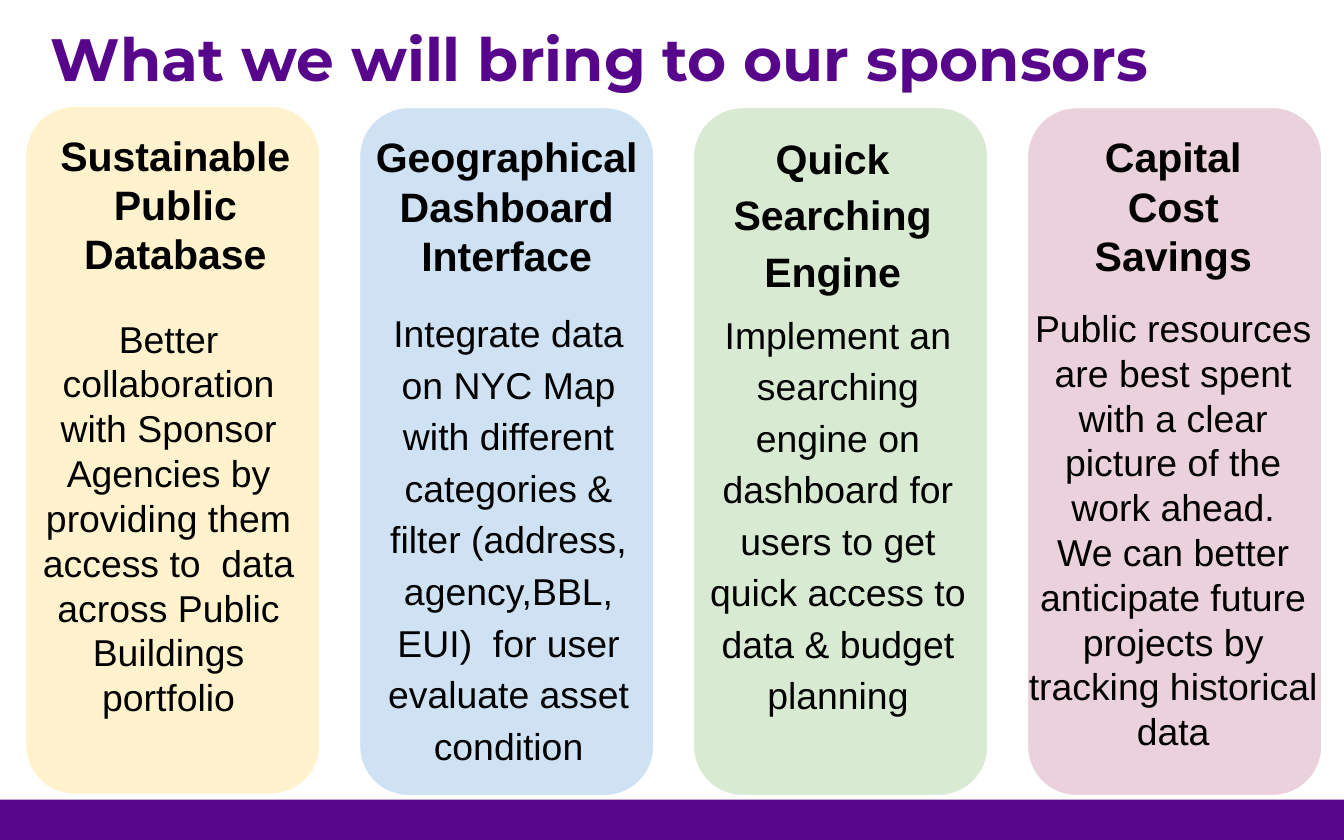
"""Build the slide on what the project brings to its sponsors: four benefit cards."""
from pptx import Presentation, util as u
from pptx.dml.color import RGBColor
from pptx.enum import shapes, text

PURPLE = RGBColor(0x57, 0x06, 0x8C)
BLACK = RGBColor(0, 0, 0)
WHITE = RGBColor(0xFF, 0xFF, 0xFF)
YELLOW = RGBColor(0xFF, 0xF2, 0xCC)
BLUE = RGBColor(0xCF, 0xE2, 0xF3)
GREEN = RGBColor(0xD9, 0xEA, 0xD3)
PINK = RGBColor(0xEA, 0xD1, 0xDC)

MARGIN, COLUMN, CARD_WIDTH, CARD_HEIGHT = 0.19, 2.485, 2.19, 5.12
INDENT = u.Inches(0.5)

deck = Presentation()
deck.slide_width, deck.slide_height = u.Inches(10), u.Inches(6.25)
slide = deck.slides.add_slide(deck.slide_layouts[6])


def add_panel(kind, box, color):
    panel = slide.shapes.add_shape(kind, *map(u.Inches, box))
    panel.shadow.inherit = False
    panel.fill.solid()
    panel.fill.fore_color.rgb = color
    panel.line.fill.background()
    return panel


def add_words(box, lines, size, bold=False, color=BLACK, font="Arial", align=text.PP_ALIGN.CENTER):
    frame = slide.shapes.add_textbox(*map(u.Inches, box)).text_frame
    frame.word_wrap = True
    frame.margin_left = frame.margin_right = frame.margin_top = frame.margin_bottom = u.Inches(0.1)
    frame.text = "\n".join(lines)
    for paragraph in frame.paragraphs:
        paragraph.alignment = align
        paragraph.font.name, paragraph.font.size = font, u.Pt(size)
        paragraph.font.bold, paragraph.font.color.rgb = bold, color
    return frame.paragraphs


add_panel(shapes.MSO_SHAPE.RECTANGLE, (0, 5.95, 10, 0.3), PURPLE)

cards = [
    (YELLOW, 0.79, ["Sustainable Public Database"], (0.07, 2.09, 1.68),
     ["Better collaboration with Sponsor Agencies by providing them access to  data "
      "across Public Buildings portfolio"], (0.02, 2.25, 2.09, 3.23), False),
    (BLUE, 0.8, ["Geographical Dashboard Interface"], (0, 2.19, 1.68),
     ["Integrate data on NYC Map with different categories & filter (address, agency,BBL, "
      "EUI)  for user evaluate asset condition"], (-0.42, 2.16, 2.56, 4.09), True),
    (GREEN, 0.8, ["Quick", "Searching Engine"], (-0.01, 2.09, 1.96),
     ["Implement an searching engine on dashboard for users to get quick access to "
      "data & budget planning"], (-0.52, 2.17, 2.69, 3.7), True),
    (PINK, 0.8, ["Capital", "Cost Savings"], (0.04, 2.09, 1.68),
     ["Public resources are best spent with a clear picture of the work ahead.",
      "We can better anticipate future projects by tracking historical data"],
     (-0.1, 2.17, 2.37, 3.57), False),
]

for column, (color, top, heading, heading_box, benefit, benefit_box, airy) in enumerate(cards):
    left = MARGIN + column * COLUMN
    card = add_panel(shapes.MSO_SHAPE.ROUNDED_RECTANGLE, (left, top, CARD_WIDTH, CARD_HEIGHT), color)
    card.line.color.rgb, card.line.width = WHITE, u.Pt(0.75)

    shift, width, height = heading_box
    heading_top = top + (0.09 if color == GREEN else 0.08)
    heading_lines = add_words((left + shift, heading_top, width, height), heading, 22, bold=True)
    if color == GREEN:
        heading_lines[1].line_spacing = 1.15

    shift, *rest = benefit_box
    for paragraph in add_words((left + shift, *rest), benefit, 20):
        if airy:
            paragraph.line_spacing = 1.15
            properties = paragraph._p.get_or_add_pPr()
            properties.set("marL", str(INDENT))
            properties.set("indent", "0")

title = add_words((0.28, 0.06, 9.44, 0.74), ["What we will bring to our sponsors"], 32,
                  bold=True, color=PURPLE, font="Montserrat", align=text.PP_ALIGN.LEFT)
title[0].space_before = u.Pt(4.4)

deck.save("out.pptx")
